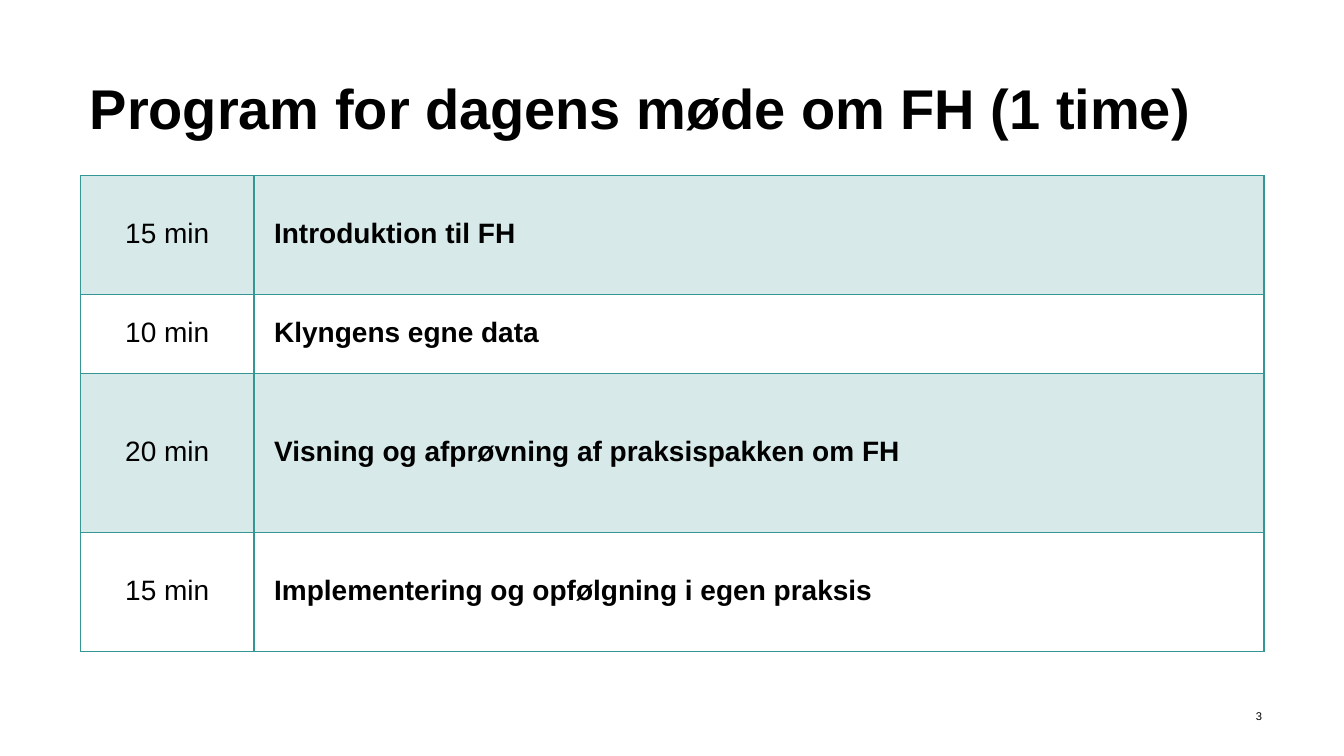
from dataclasses import dataclass

from lxml.etree import SubElement
from pptx import Presentation
from pptx.dml.color import RGBColor
from pptx.enum.text import MSO_ANCHOR, PP_ALIGN
from pptx.oxml.ns import qn
from pptx.util import Pt

BLACK, WHITE, TEAL, PALE = "000000", "FFFFFF", "359791", "D7EAE9"
SCALE = 5.67  # row height in points per minute


@dataclass
class Item:
    mins: int
    topic: str


@dataclass
class Label:
    text: str
    box: tuple[float, float, float, float]
    inset: tuple[float, float]
    size: float
    bold: bool
    align: PP_ALIGN
    lines: float


ITEMS = [
    Item(15, "Introduktion til FH"),
    Item(10, "Klyngens egne data"),
    Item(20, "Visning og afprøvning af praksispakken om FH"),
    Item(15, "Implementering og opfølgning i egen praksis"),
]
LABELS = [
    Label("Program for dagens møde om FH (1 time)", (57, 57.6, 846, 46),
          (7.2, 3.6), 40, True, PP_ALIGN.LEFT, 0.8),
    Label("3", (845.3, 504.7, 58.3, 13.7), (2, 2), 8, False, PP_ALIGN.RIGHT, 1),
]


def color(code: str) -> RGBColor:
    return RGBColor.from_string(code)


def apply(target, values: dict) -> None:
    for name, value in values.items():
        setattr(target, name, value)


def margins(side: float, edge: float) -> dict:
    return {"margin_left": Pt(side), "margin_right": Pt(side),
            "margin_top": Pt(edge), "margin_bottom": Pt(edge)}


def write(para, text: str, size: float, bold: bool, align: PP_ALIGN, lines: float) -> None:
    run = para.add_run()
    run.text = text
    apply(para, {"alignment": align, "line_spacing": lines})
    apply(run.font, {"name": "Arial", "size": Pt(size), "bold": bold})
    run.font.color.rgb = color(BLACK)


def add_label(slide, label: Label) -> None:
    frame = slide.shapes.add_textbox(*map(Pt, label.box)).text_frame
    apply(frame, {"word_wrap": True, "vertical_anchor": MSO_ANCHOR.BOTTOM,
                  **margins(*label.inset)})
    write(frame.paragraphs[0], label.text, label.size, label.bold, label.align, label.lines)


def add_rules(cell) -> None:
    props = cell._tc.get_or_add_tcPr()
    for side in ("a:lnL", "a:lnR", "a:lnT", "a:lnB"):
        line = SubElement(props, qn(side), w=str(Pt(1)))
        fill = SubElement(line, qn("a:solidFill"))
        SubElement(fill, qn("a:srgbClr"), val=TEAL)


def fill_cell(cell, text: str, shade: str, bold: bool, align: PP_ALIGN) -> None:
    add_rules(cell)
    cell.fill.solid()
    cell.fill.fore_color.rgb = color(shade)
    apply(cell, {"vertical_anchor": MSO_ANCHOR.MIDDLE, **margins(14.4, 7.2)})
    write(cell.text_frame.paragraphs[0], text, 20, bold, align, 0.9)


def add_plan(slide, items: list[Item]) -> None:
    total = SCALE * sum(item.mins for item in items)
    table = slide.shapes.add_table(
        len(items), 2, Pt(57.6), Pt(125.3), Pt(845.3), Pt(total)).table
    apply(table, {"first_row": False, "horz_banding": False})
    for column, width in zip(table.columns, (123.8, 721.5)):
        column.width = Pt(width)
    for index, item in enumerate(items):
        row = table.rows[index]
        row.height = Pt(item.mins * SCALE)
        shade = WHITE if index % 2 else PALE
        fill_cell(row.cells[0], f"{item.mins} min", shade, False, PP_ALIGN.CENTER)
        fill_cell(row.cells[1], item.topic, shade, True, PP_ALIGN.LEFT)


def main() -> None:
    deck = Presentation()
    apply(deck, {"slide_width": Pt(960), "slide_height": Pt(540)})
    slide = deck.slides.add_slide(deck.slide_layouts[6])
    # Agenda table
    add_plan(slide, ITEMS)
    # Title and page number
    for label in LABELS:
        add_label(slide, label)
    deck.save("out.pptx")


if __name__ == "__main__":
    main()
